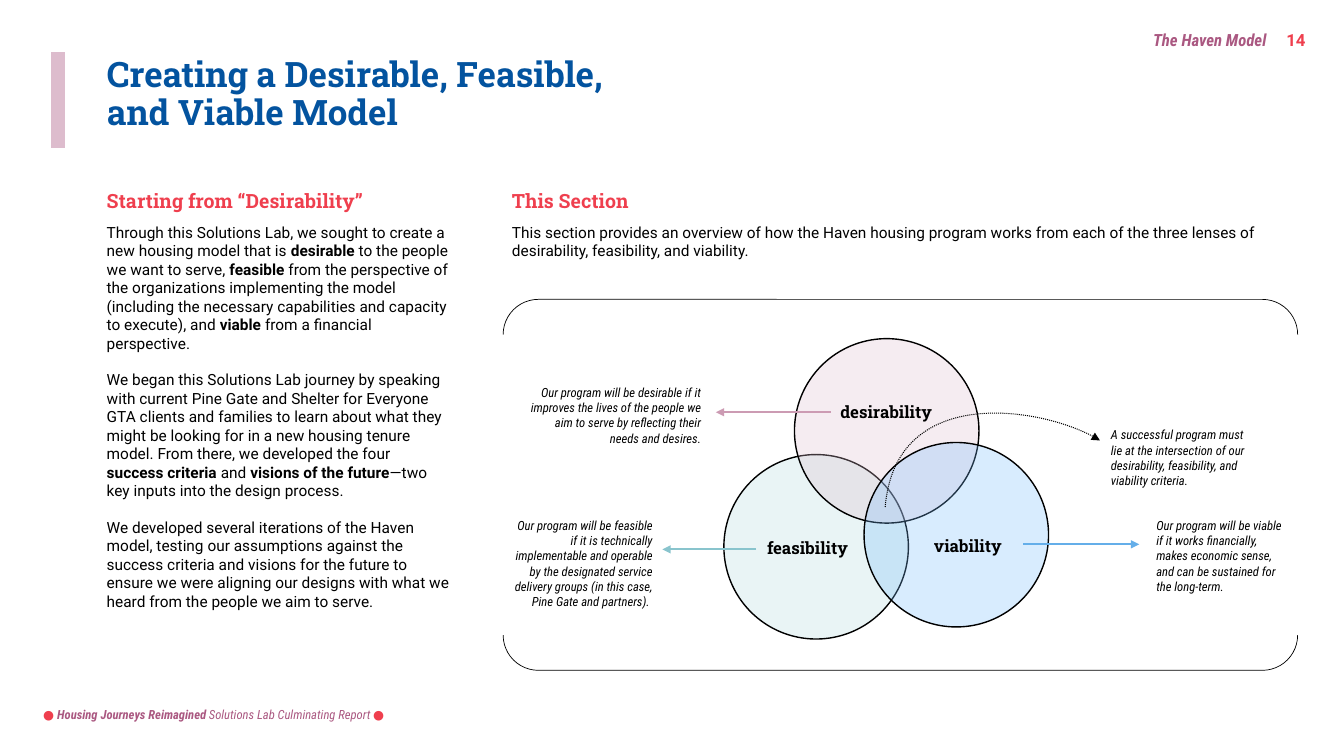
from lxml import etree
from pptx import Presentation
from pptx.dml.color import RGBColor
from pptx.enum.dml import MSO_LINE
from pptx.enum.shapes import MSO_CONNECTOR, MSO_SHAPE
from pptx.enum.text import MSO_ANCHOR, MSO_AUTO_SIZE, PP_ALIGN
from pptx.oxml.ns import qn
from pptx.util import Emu, Pt

LEFT, CENTER, RIGHT = PP_ALIGN.LEFT, PP_ALIGN.CENTER, PP_ALIGN.RIGHT
TOP, MIDDLE = MSO_ANCHOR.TOP, MSO_ANCHOR.MIDDLE
OVAL, BRACKETS = MSO_SHAPE.OVAL, MSO_SHAPE.DOUBLE_BRACKET
STRAIGHT, DOTTED = MSO_CONNECTOR.STRAIGHT, MSO_LINE.ROUND_DOT

BODY, NARROW, SLAB = "Roboto", "Roboto Condensed", "Roboto Slab"
BLACK, RED, PLUM, BLUE, PINK = "000000", "EF3F4E", "AA5881", "03539F", "DDBCCD"

# Diagram parts, measured from the corner of the diagram's box
CIRCLE = 183
LENSES = [  # name, fill, circle corner, label centre
    ("feasibility", "B0D8DE", (219, 154), (302, 248)),
    ("desirability", PINK, (289, 39), (380, 113)),
    ("viability", "76BBFC", (358, 142), (461, 246)),
]
ARROWS = [  # colour, start x, end x, y
    ("CC9BB3", 325, 211, 112),
    ("89C4CD", 251, 158, 248),
    ("64AEE9", 516, 631, 243),
]
NOTES = [  # left, top, width, height, alignment, text
    (10, 80, 196, 71, RIGHT, "Our program will be desirable if it improves the lives of "
     "the people we aim to serve by reflecting their needs and desires."),
    (-2, 212, 160, 101, RIGHT, "Our program will be feasible if it is technically "
     "implementable and operable by the designated service delivery groups "
     "(in this case, Pine Gate and partners). "),
    (638, 212, 150, 86, LEFT, "Our program will be viable if it works financially, makes "
     "economic sense, and can be sustained for the long-term."),
    (593, 122, 154, 71, LEFT, "A successful program must lie at the intersection of our "
     "desirability, feasibility, and viability criteria."),
]
CURVE = [(379, 206), (389, 84), (542, 108), (592, 140)]

# Text; ** marks bold
STORY = [
    "Through this Solutions Lab, we sought to create a new housing model that is "
    "**desirable **to the people we want to serve, **feasible **from the perspective of "
    "the organizations implementing the model (including the necessary capabilities and "
    "capacity to execute), and **viable **from a financial perspective.",
    "We began this Solutions Lab journey by speaking with current Pine Gate and Shelter "
    "for Everyone GTA clients and families to learn about what they might be looking for "
    "in a new housing tenure model. From there, we developed the four **success criteria "
    "**and **visions of the future**—two key inputs into the design process.",
    "We developed several iterations of the Haven model, testing our assumptions against "
    "the success criteria and visions for the future to ensure we were aligning our "
    "designs with what we heard from the people we aim to serve.",
]
SECTION = [
    "This section provides an overview of how the Haven housing program works from each "
    "of the three lenses of desirability, feasibility, and viability.",
]


def px(n):
    return Emu(n * 9144)


def rgb(code):
    return RGBColor.from_string(code)


def style_font(font, name, size, color, bold=None, italic=None):
    font.name, font.size = name, Pt(size)
    font.bold, font.italic = bold, italic
    font.color.rgb = rgb(color)


def style_line(line, color, width):
    line.color.rgb = rgb(color)
    line.width = Pt(width)


def add_head(line):
    ln = line._get_or_add_ln()
    etree.SubElement(ln, qn("a:tailEnd"), type="triangle")


def add_text(s, box, paragraphs, name, size, color, bold=None, italic=None,
             align=LEFT, anchor=TOP, inset=True, gap=0, spacing=None):
    tf = s.shapes.add_textbox(*map(px, box)).text_frame
    tf.word_wrap = True
    tf.vertical_anchor = anchor
    if not inset:
        tf.margin_left = tf.margin_right = tf.margin_top = tf.margin_bottom = 0
    for i, text in enumerate(paragraphs):
        p = tf.add_paragraph() if i else tf.paragraphs[0]
        p.alignment, p.line_spacing = align, spacing
        if i < len(paragraphs) - 1:
            p.space_after = Pt(gap)
        style_font(p.font, name, size, color, bold, italic)
        for j, part in enumerate(text.split("**")):
            r = p.add_run()
            r.text = part
            if j % 2:
                r.font.bold = True
    return tf


def add_line(s, x1, y1, x2, y2, color, width):
    c = s.shapes.add_connector(STRAIGHT, px(x1), px(y1), px(x2), px(y2))
    style_line(c.line, color, width)
    etree.SubElement(c._element.spPr, qn("a:effectLst"))
    return c


def add_outline(s, kind, x, y, w, h, width, fill=None):
    sp = s.shapes.add_shape(kind, px(x), px(y), px(w), px(h))
    sp.shadow.inherit = False
    style_line(sp.line, BLACK, width)
    if fill:
        sp.fill.solid()
        sp.fill.fore_color.rgb = rgb(fill)
        clr = sp._element.spPr.find(qn("a:solidFill"))[0]
        etree.SubElement(clr, qn("a:alpha"), val="28000")
    else:
        sp.fill.background()
    return sp


def title_block(s, x, y, w, h):
    add_line(s, x, y, x, y + h, PINK, 10)
    title = s.shapes.title
    title.left, title.top = px(x + 38), px(y)
    title.width, title.height = px(w - 38), px(h)
    tf = title.text_frame
    tf.text = "Creating a Desirable, Feasible, and Viable Model"
    tf.word_wrap = True
    tf.auto_size = MSO_AUTO_SIZE.NONE
    tf.vertical_anchor = TOP
    p = tf.paragraphs[0]
    p.alignment, p.line_spacing = LEFT, 0.9
    style_font(p.font, SLAB, 25, BLUE, True)


def page_header(s, x, y, w, h):
    number_w = 47
    add_text(s, (x, y, w - number_w, h), ["The Haven Model"], NARROW, 12, PLUM,
             True, True, RIGHT, MIDDLE)
    add_text(s, (x + w - number_w, y, number_w, h), ["14"], BODY, 12, RED, True,
             anchor=MIDDLE)


def text_column(s, x, y, w, h, heading, paragraphs):
    add_text(s, (x, y, w, 34), [heading], SLAB, 14, RED, True)
    add_text(s, (x, y + 33, w, h - 33), paragraphs, BODY, 11, BLACK, gap=13)


def curved_arrow(s, x, y):
    points = [(px(x + dx), px(y + dy)) for dx, dy in CURVE]
    builder = s.shapes.build_freeform(*points[0])
    builder.add_line_segments(points[1:], close=False)
    sp = builder.convert_to_shape()
    sp.shadow.inherit = False
    sp.fill.background()
    style_line(sp.line, BLACK, 0.75)
    sp.line.dash_style = DOTTED
    add_head(sp.line)
    # Join the segments into one Bézier curve
    segments = list(sp._element.iter(qn("a:lnTo")))
    bezier = etree.SubElement(segments[0].getparent(), qn("a:cubicBezTo"))
    for segment in segments:
        bezier.append(segment[0])
        segment.getparent().remove(segment)


def lens_diagram(s, x, y, w, h):
    # Frame: a bracket pair turned on its side
    frame = add_outline(s, BRACKETS, x + (w - h) // 2, y + (h - w) // 2, h, w, 0.5)
    frame.rotation = 90
    frame.adjustments[0] = 0.095
    # Overlapping circles, then their labels
    for _, fill, (dx, dy), _ in LENSES:
        add_outline(s, OVAL, x + dx, y + dy, CIRCLE, CIRCLE, 1, fill)
    for name, _, _, (cx, cy) in LENSES:
        add_text(s, (x + cx - 65, y + cy - 17, 130, 34), [name], SLAB, 12, BLACK, True,
                 align=CENTER, anchor=MIDDLE, inset=False, spacing=0.9)
    # Arrows and notes
    for color, x1, x2, dy in ARROWS:
        add_head(add_line(s, x + x1, y + dy, x + x2, y + dy, color, 1.5).line)
    curved_arrow(s, x, y)
    for dx, dy, nw, nh, align, text in NOTES:
        tf = add_text(s, (x + dx, y + dy, nw, nh), [text], NARROW, 9, BLACK,
                      italic=True, align=align)
        tf.paragraphs[0].space_before = tf.paragraphs[0].space_after = Pt(3)


def page_footer(s, x, y, w, h):
    tf = add_text(s, (x, y, w, h), [], NARROW, 9, PLUM, anchor=MIDDLE)
    for text, name, color, bold, italic in [
        ("● ", SLAB, RED, False, False),
        ("Housing Journeys Reimagined ", NARROW, PLUM, True, True),
        ("Solutions Lab Culminating Report ", NARROW, PLUM, False, True),
        ("●", SLAB, RED, False, False),
    ]:
        r = tf.paragraphs[0].add_run()
        r.text = text
        style_font(r.font, name, 9, color, bold, italic)


def main():
    prs = Presentation()
    prs.slide_width, prs.slide_height = px(1333), px(750)
    s = prs.slides.add_slide(prs.slide_layouts[5])
    title_block(s, 58, 52, 609, 95)
    page_header(s, 1071, 25, 242, 30)
    text_column(s, 96, 183, 361, 432, "Starting from “Desirability”", STORY)
    text_column(s, 498, 183, 767, 80, "This Section", SECTION)
    lens_diagram(s, 499, 297, 788, 368)
    page_footer(s, 33, 696, 361, 25)
    prs.save("out.pptx")


if __name__ == "__main__":
    main()
